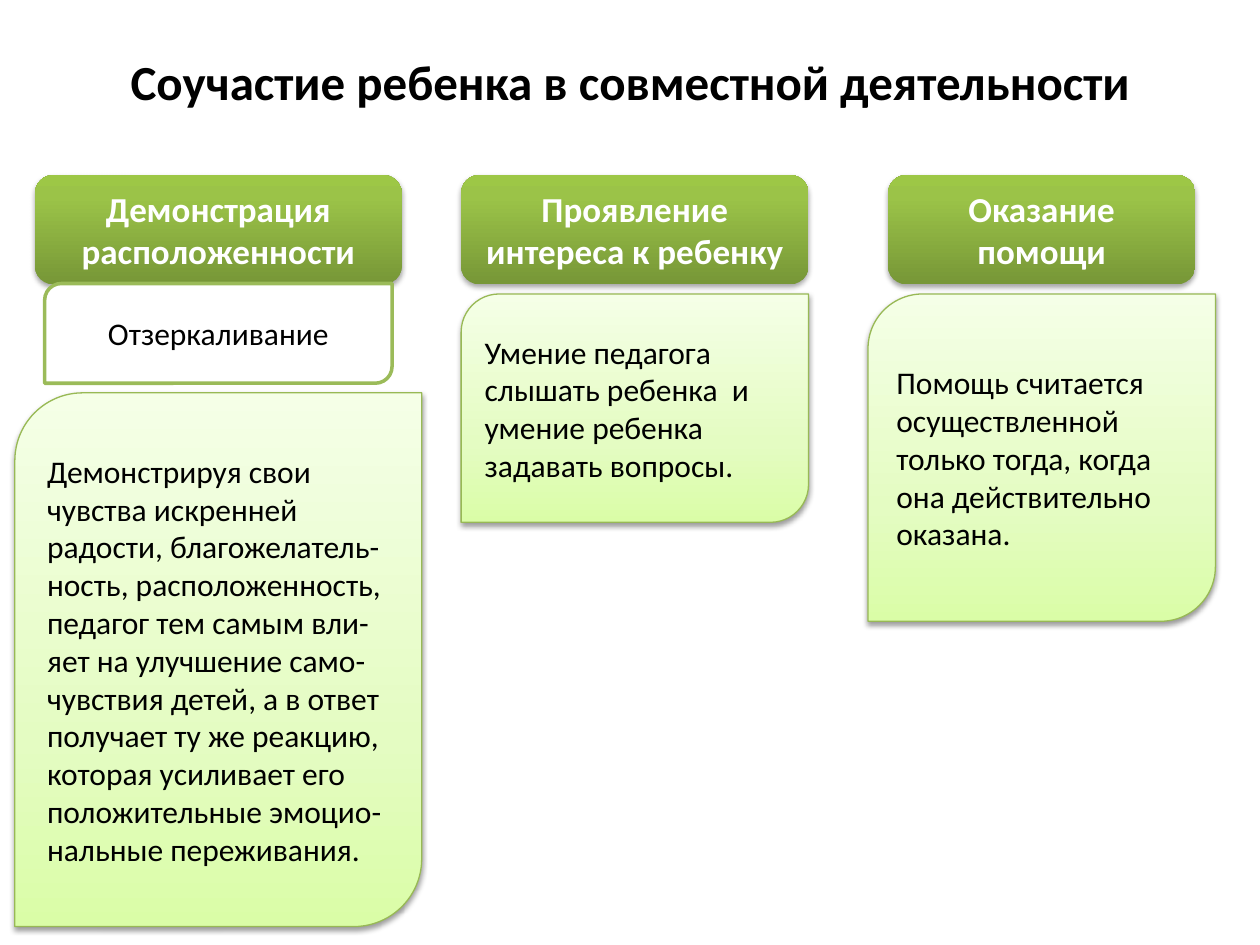
from lxml import etree
from pptx import Presentation
from pptx.dml.color import RGBColor
from pptx.enum.shapes import MSO_SHAPE as SHAPE
from pptx.enum.text import MSO_ANCHOR as ANCHOR, PP_ALIGN as ALIGN
from pptx.oxml.ns import qn
from pptx.util import Pt


def rgb(color):
    return RGBColor.from_string(color)


class Deck:
    FONT = "Calibri"
    BLACK, WHITE, GREEN, LEAF = "000000", "FFFFFF", "9BBB59", "98B955"
    HEADER_STOPS = [(0, "779737"), (80, "9BC348"), (100, "9DC746")]
    NOTE_STOPS = [(0, "DAFDA7"), (35, "E4FCC2"), (100, "F5FFE7")]

    def __init__(self, width, height):
        self.prs = Presentation()
        self.prs.slide_width, self.prs.slide_height = Pt(width), Pt(height)
        self.s = self.prs.slides.add_slide(self.prs.slide_layouts[6])

    def set_text(self, sp, text, size, color, bold=False, align=ALIGN.CENTER):
        tf = sp.text_frame
        tf.word_wrap = True
        tf.vertical_anchor = ANCHOR.MIDDLE
        p = tf.paragraphs[0]
        p.text, p.alignment = text, align
        p.font.name, p.font.size, p.font.bold = self.FONT, Pt(size), bold
        p.font.color.rgb = rgb(color)

    def shape(self, kind, box):
        sp = self.s.shapes.add_shape(kind, *map(Pt, box))
        sp.shadow.inherit = False
        return sp

    def outline(self, sp, color, width):
        sp.line.color.rgb = rgb(color)
        sp.line.width = Pt(width)

    def gradient(self, sp, stops):
        """Fill upwards from the first stop at the bottom edge."""
        sp.fill.gradient()
        sp.fill.gradient_angle = 90
        gs_list = sp._element.spPr.find(".//" + qn("a:gsLst"))
        for gs in list(gs_list):
            gs_list.remove(gs)
        for pos, color in stops:
            gs = etree.SubElement(gs_list, qn("a:gs"), pos=str(pos * 1000))
            etree.SubElement(gs, qn("a:srgbClr"), val=color)

    def cast_shadow(self, sp, alpha, blur, dist):
        effects = sp._element.spPr.find(qn("a:effectLst"))
        shadow = etree.SubElement(effects, qn("a:outerShdw"), blurRad=str(Pt(blur)),
                                  dist=str(Pt(dist)), dir="5400000", rotWithShape="0")
        clr = etree.SubElement(shadow, qn("a:srgbClr"), val=self.BLACK)
        etree.SubElement(clr, qn("a:alpha"), val=str(alpha * 1000))

    def title(self, text, box):
        sp = self.s.shapes.add_textbox(*map(Pt, box))
        self.set_text(sp, text, 28, self.BLACK, bold=True)

    def header(self, text, box):
        sp = self.shape(SHAPE.ROUNDED_RECTANGLE, box)
        self.gradient(sp, self.HEADER_STOPS)
        sp.line.fill.background()
        self.cast_shadow(sp, 35, 3.1, 1.8)
        self.set_text(sp, text, 20, self.WHITE, bold=True)

    def label(self, text, box):
        sp = self.shape(SHAPE.ROUND_2_DIAG_RECTANGLE, box)
        sp.fill.solid()
        sp.fill.fore_color.rgb = rgb(self.WHITE)
        self.outline(sp, self.GREEN, 2)
        self.set_text(sp, text, 18, self.BLACK)

    def note(self, text, box):
        sp = self.shape(SHAPE.ROUND_2_DIAG_RECTANGLE, box)
        self.gradient(sp, self.NOTE_STOPS)
        self.outline(sp, self.LEAF, 0.75)
        self.cast_shadow(sp, 38, 3.1, 1.6)
        self.set_text(sp, text, 18, self.BLACK, align=ALIGN.LEFT)


def main():
    deck = Deck(720, 540)
    deck.title("Соучастие ребенка в совместной деятельности", (36, 21.5, 648, 49.5))

    # Column headers share one row
    for text, left, width in [
        ("Демонстрация расположенности", 20, 209.5),
        ("Проявление интереса к ребенку", 263.5, 198.5),
        ("Оказание помощи", 507.5, 175.5),
    ]:
        deck.header(text, (left, 100, width, 62.5))

    # Label under the first header
    deck.label("Отзеркаливание", (25.5, 162, 198.5, 57))

    # Explanations
    for text, box in [
        ("Демонстрируя свои чувства искренней радости, благожелатель-ность, "
         "расположенность, педагог тем самым вли-яет на улучшение само-чувствия "
         "детей, а в ответ получает ту же реакцию, которая усиливает его "
         "положительные эмоцио-нальные переживания.", (8.5, 224.5, 232.5, 305)),
        ("Умение педагога слышать ребенка  и умение ребенка задавать вопросы.",
         (263.5, 168, 198.5, 130.5)),
        ("Помощь считается осуществленной только тогда, когда она действительно "
         "оказана.", (496, 168, 198.5, 187)),
    ]:
        deck.note(text, box)

    deck.prs.save("out.pptx")


if __name__ == "__main__":
    main()
